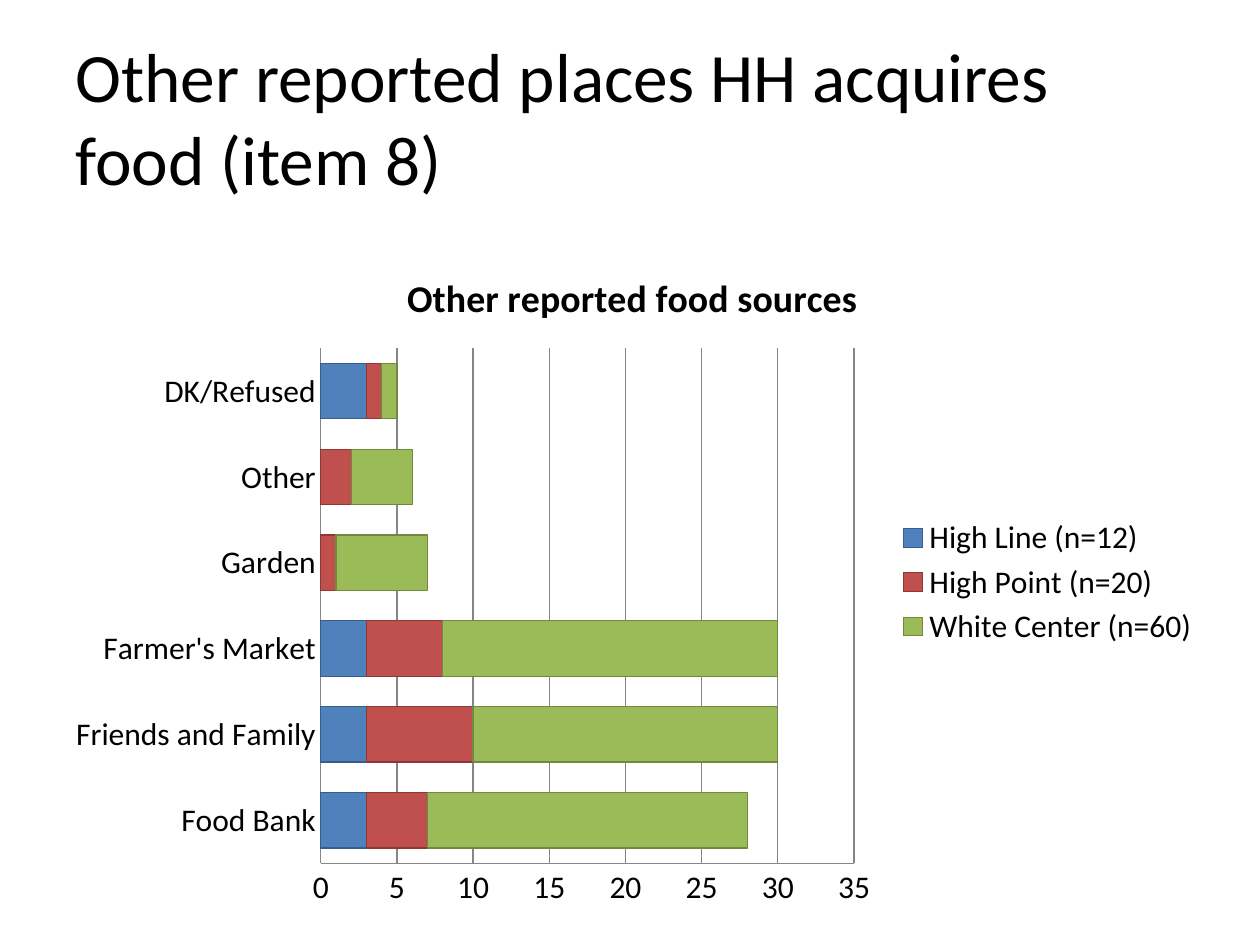
from dataclasses import dataclass

from pptx import Presentation
from pptx.chart.data import CategoryChartData
from pptx.dml.color import RGBColor
from pptx.enum.chart import XL_CHART_TYPE, XL_LEGEND_POSITION, XL_TICK_MARK
from pptx.enum.text import MSO_ANCHOR, PP_ALIGN
from pptx.util import Inches, Pt


@dataclass(frozen=True)
class Theme:
    font: str = "Calibri"
    text: str = "000000"
    axis: str = "868686"
    title_size: float = 39.6
    chart_title_size: float = 21.6
    chart_size: float = 18
    line_width: float = 0.75


CATEGORIES = ["Food Bank", "Friends and Family", "Farmer's Market",
              "Garden", "Other", "DK/Refused"]
# Name, values, fill colour, outline colour
SITES = [
    ("High Line (n=12)", (3, 3, 3, 0, 0, 3), "4F81BD", "385D8A"),
    ("High Point (n=20)", (4, 7, 5, 1, 2, 1), "C0504D", "8C3836"),
    ("White Center (n=60)", (21, 20, 22, 6, 4, 1), "9BBB59", "71893F"),
]


class SlideBuilder:
    def __init__(self, prs, theme):
        self.theme = theme
        self.slide = prs.slides.add_slide(prs.slide_layouts[5])

    def format_font(self, font, size, bold=False):
        values = {"name": self.theme.font, "size": Pt(size), "bold": bold}
        for name, value in values.items():
            setattr(font, name, value)
        font.color.rgb = RGBColor.from_string(self.theme.text)

    def format_line(self, line, color):
        line.color.rgb = RGBColor.from_string(color)
        line.width = Pt(self.theme.line_width)

    def title(self, text, left, top, width, height):
        sp = self.slide.shapes.title
        box = {"left": left, "top": top, "width": width, "height": height}
        for name, value in box.items():
            setattr(sp, name, Inches(value))
        tf = sp.text_frame
        tf.word_wrap = True
        tf.vertical_anchor = MSO_ANCHOR.MIDDLE
        p = tf.paragraphs[0]
        p.alignment = PP_ALIGN.LEFT
        r = p.add_run()
        r.text = text
        self.format_font(r.font, self.theme.title_size)

    def stacked_bars(self, heading, categories, sites, left, top, width, height):
        data = CategoryChartData()
        data.categories = categories
        for name, values, _, _ in sites:
            data.add_series(name, values)
        box = [Inches(v) for v in (left, top, width, height)]
        chart = self.slide.shapes.add_chart(
            XL_CHART_TYPE.BAR_STACKED, *box, data).chart
        self.format_font(chart.font, self.theme.chart_size)

        # Chart title
        chart.has_title = True
        p = chart.chart_title.text_frame.paragraphs[0]
        r = p.add_run()
        r.text = heading
        self.format_font(r.font, self.theme.chart_title_size, bold=True)
        chart.chart_title.include_in_layout = False

        # Legend
        chart.has_legend = True
        chart.legend.position = XL_LEGEND_POSITION.RIGHT
        chart.legend.include_in_layout = False

        # Bars
        plot = chart.plots[0]
        for name, value in {"gap_width": 55, "overlap": 100,
                            "vary_by_categories": False}.items():
            setattr(plot, name, value)
        for series, (_, _, fill, outline) in zip(plot.series, sites):
            series.format.fill.solid()
            series.format.fill.fore_color.rgb = RGBColor.from_string(fill)
            self.format_line(series.format.line, outline)

        # Axes and gridlines
        for axis in (chart.category_axis, chart.value_axis):
            axis.major_tick_mark = XL_TICK_MARK.NONE
            axis.minor_tick_mark = XL_TICK_MARK.NONE
            self.format_line(axis.format.line, self.theme.axis)
        chart.value_axis.has_major_gridlines = True
        self.format_line(chart.value_axis.major_gridlines.format.line,
                         self.theme.axis)


def main():
    prs = Presentation()
    prs.slide_width, prs.slide_height = Inches(10), Inches(7.5)
    s = SlideBuilder(prs, Theme())
    s.title("Other reported places HH acquires food (item 8)", 0.5, 0.3, 9, 1.25)
    s.stacked_bars("Other reported food sources", CATEGORIES, SITES,
                   0.42, 1.94, 9.2, 5.36)
    prs.save("out.pptx")


if __name__ == "__main__":
    main()
